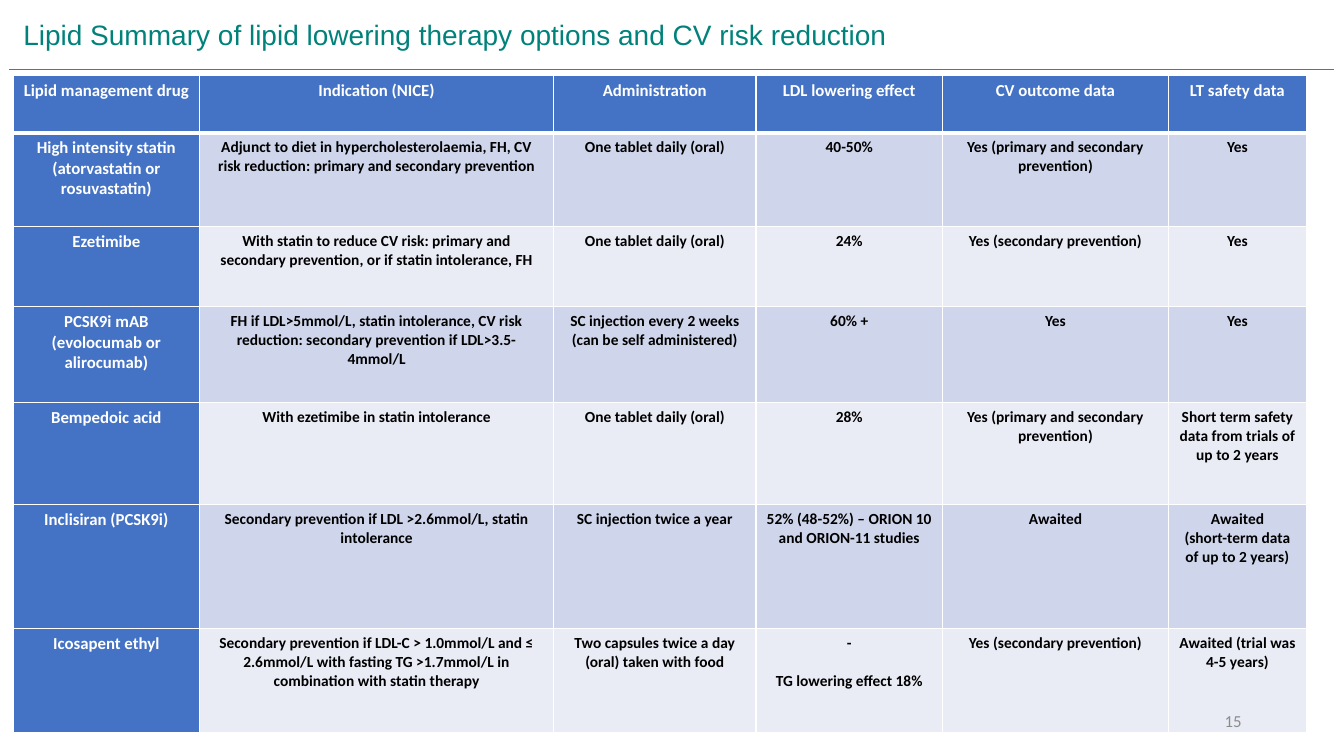
from dataclasses import dataclass

from lxml import etree
from pptx import Presentation
from pptx.dml.color import RGBColor
from pptx.enum.shapes import MSO_CONNECTOR
from pptx.enum.text import MSO_ANCHOR, PP_ALIGN
from pptx.oxml.ns import qn
from pptx.util import Pt

CENTER, LEFT, RIGHT = PP_ALIGN.CENTER, PP_ALIGN.LEFT, PP_ALIGN.RIGHT
MIDDLE = MSO_ANCHOR.MIDDLE
STRAIGHT = MSO_CONNECTOR.STRAIGHT

TITLE = "Lipid Summary of lipid lowering therapy options and CV risk reduction"
PAGE = "15"
# A newline starts a new paragraph; a "gap" cell sets its paragraphs a line apart.
ROWS = [
    ("Lipid management drug", "Indication (NICE)", "Administration",
     "LDL lowering effect", "CV outcome data", "LT safety data"),
    ("High intensity statin (atorvastatin or rosuvastatin)",
     "Adjunct to diet in hypercholesterolaemia, FH, CV risk reduction: "
     "primary and secondary prevention",
     "One tablet daily (oral)", "40-50%",
     "Yes (primary and secondary prevention)", "Yes"),
    ("Ezetimibe",
     "With statin to reduce CV risk: primary and secondary prevention, "
     "or if statin intolerance, FH",
     "One tablet daily (oral)", "24%", "Yes (secondary prevention)", "Yes"),
    ("PCSK9i mAB\n(evolocumab or\nalirocumab)",
     "FH if LDL>5mmol/L, statin intolerance, CV risk reduction: "
     "secondary prevention if LDL>3.5-4mmol/L",
     "SC injection every 2 weeks (can be self administered)", "60% +",
     "Yes", "Yes"),
    ("Bempedoic acid", "With ezetimibe in statin intolerance",
     "One tablet daily (oral)", "28%",
     "Yes (primary and secondary prevention)",
     "Short term safety data from trials of up to 2 years"),
    ("Inclisiran (PCSK9i)",
     "Secondary prevention if LDL >2.6mmol/L, statin intolerance",
     "SC injection twice a year",
     "52% (48-52%) – ORION 10 and ORION-11 studies", "Awaited",
     "Awaited\n(short-term data of up to 2 years)"),
    ("Icosapent ethyl",
     "Secondary prevention if LDL-C > 1.0mmol/L and ≤ 2.6mmol/L with "
     "fasting TG >1.7mmol/L in combination with statin therapy",
     "Two capsules twice a day (oral) taken with food",
     "-\nTG lowering effect 18%", "Yes (secondary prevention)",
     "Awaited (trial was 4-5 years)"),
]
GAPS = {(6, 3)}
WIDTHS = (133.2, 252.9, 144.6, 133.2, 161.4, 98.6)
HEIGHTS = (41.2, 66.8, 57.6, 68.4, 72.8, 88.6, 74.2)


@dataclass(frozen=True)
class Theme:
    head: str = "Arial"
    body: str = "Calibri"
    teal: str = "00827B"
    blue: str = "4472C4"
    bands: tuple = ("E9EBF5", "CFD5EA")
    white: str = "FFFFFF"
    black: str = "000000"
    gray: str = "8C8C8C"
    title: float = 20
    label: float = 12
    text: float = 11
    gap: float = 13.4
    thin: float = 1
    thick: float = 3


T = Theme()


def style(para, name, size, color, align, bold=False):
    para.alignment = align
    font = para.font
    font.name, font.size, font.bold = name, Pt(size), bold
    font.color.rgb = RGBColor.from_string(color)


def edge(cell, side, width):
    """Draw one cell border; sides go in the order L, R, T, B, before the fill."""
    props = cell._tc.get_or_add_tcPr()
    line = etree.SubElement(props, qn("a:ln" + side), w=str(Pt(width)))
    fill = etree.SubElement(line, qn("a:solidFill"))
    etree.SubElement(fill, qn("a:srgbClr"), val=T.white)


def add_title(slide):
    box = slide.shapes.title
    box.left, box.top, box.width, box.height = Pt(9.4), Pt(6.5), Pt(803.5), Pt(38.9)
    frame = box.text_frame
    frame.text, frame.vertical_anchor, frame.word_wrap = TITLE, MIDDLE, True
    para = frame.paragraphs[0]
    para.line_spacing = 0.9
    style(para, T.head, T.title, T.teal, LEFT)


def add_rule(slide):
    rule = slide.shapes.add_connector(STRAIGHT, Pt(6.5), Pt(49.7), Pt(952.6), Pt(49.7))
    rule.line.color.rgb = RGBColor.from_string(T.blue)
    rule.line.width = Pt(0.5)
    etree.SubElement(rule._element.spPr, qn("a:effectLst"))


def fill_cell(cell, r, c, text):
    label = r == 0 or c == 0
    cell.text = text
    for i, para in enumerate(cell.text_frame.paragraphs):
        style(para, T.body, T.label if label else T.text,
              T.white if label else T.black, CENTER, True)
        if i and (r, c) in GAPS:
            para.space_before = Pt(T.gap)
    for side in "LRTB":
        heavy = (r, side) in ((0, "B"), (1, "T"))
        edge(cell, side, T.thick if heavy else T.thin)
    cell.fill.solid()
    cell.fill.fore_color.rgb = RGBColor.from_string(T.blue if label else T.bands[r % 2])


def add_grid(slide):
    grid = slide.shapes.add_table(
        len(ROWS), len(WIDTHS), Pt(9.4), Pt(53.6),
        Pt(sum(WIDTHS)), Pt(sum(HEIGHTS))).table
    for col, width in zip(grid.columns, WIDTHS):
        col.width = Pt(width)
    for row, height in zip(grid.rows, HEIGHTS):
        row.height = Pt(height)
    for r, texts in enumerate(ROWS):
        for c, text in enumerate(texts):
            fill_cell(grid.cell(r, c), r, c, text)


def add_page(slide):
    frame = slide.shapes.add_textbox(Pt(678), Pt(500.5), Pt(216), Pt(28.8)).text_frame
    frame.text, frame.vertical_anchor, frame.word_wrap = PAGE, MIDDLE, True
    style(frame.paragraphs[0], T.body, T.label, T.gray, RIGHT)


def main():
    deck = Presentation()
    deck.slide_width, deck.slide_height = Pt(960), Pt(540)
    slide = deck.slides.add_slide(deck.slide_layouts[5])
    for add in (add_title, add_rule, add_grid, add_page):
        add(slide)
    deck.save("out.pptx")


if __name__ == "__main__":
    main()
